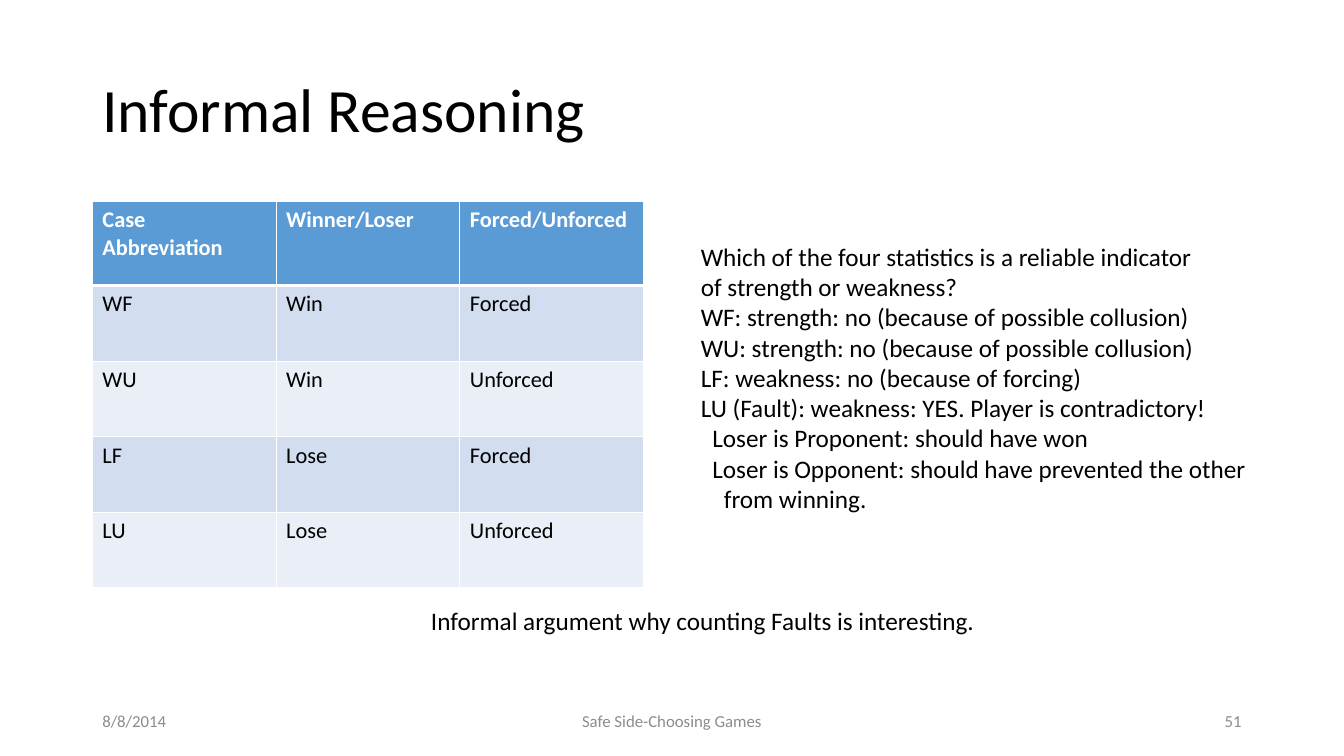
from dataclasses import dataclass

from lxml import etree
from pptx import Presentation
from pptx.dml.color import RGBColor
from pptx.enum.text import MSO_ANCHOR, PP_ALIGN
from pptx.oxml.ns import qn
from pptx.util import Pt

PX = 9525  # EMU per px, 96 px to the inch
LEFT, CENTER, RIGHT = PP_ALIGN.LEFT, PP_ALIGN.CENTER, PP_ALIGN.RIGHT
TOP, MIDDLE = MSO_ANCHOR.TOP, MSO_ANCHOR.MIDDLE


@dataclass(frozen=True)
class Theme:
    font: str = "Calibri"
    title_size: int = 44
    body_size: int = 18
    table_size: int = 16
    footer_size: int = 12
    ink: str = "000000"
    muted: str = "8C8C8C"
    white: str = "FFFFFF"
    header: str = "5B9BD5"
    bands: tuple = ("D2DEEF", "EAEFF7")


THEME = Theme()
CASES = [
    ("Case\nAbbreviation", "Winner/Loser", "Forced/Unforced"),
    ("WF", "Win", "Forced"),
    ("WU", "Win", "Unforced"),
    ("LF", "Lose", "Forced"),
    ("LU", "Lose", "Unforced"),
]
# Each line with its indent level
ARGUMENT = [
    ("Which of the four statistics is a reliable indicator", 0),
    ("of strength or weakness?", 0),
    ("WF: strength: no (because of possible collusion)", 0),
    ("WU: strength: no (because of possible collusion)", 0),
    ("LF: weakness: no (because of forcing)", 0),
    ("LU (Fault): weakness: YES. Player is contradictory!", 0),
    ("Loser is Proponent: should have won", 1),
    ("Loser is Opponent: should have prevented the other", 1),
    ("from winning.", 2),
]
INDENT = 11


def write_lines(frame, lines, size, color, bold=False, align=LEFT):
    """Fill a text frame with (text, indent level) lines; return its paragraphs."""
    for index, (text, level) in enumerate(lines):
        para = frame.paragraphs[0] if index == 0 else frame.add_paragraph()
        para.alignment = align
        if level:
            para._p.get_or_add_pPr().set("marL", str(level * INDENT * PX))
        span = para.add_run()
        span.text = text
        span.font.name = THEME.font
        span.font.size = Pt(size)
        span.font.bold = bold
        span.font.color.rgb = RGBColor.from_string(color)
    return frame.paragraphs


def add_text(page, box, lines, size, color=THEME.ink, align=LEFT, anchor=TOP):
    frame = page.shapes.add_textbox(*(length * PX for length in box)).text_frame
    frame.word_wrap = True
    frame.vertical_anchor = anchor
    return write_lines(frame, lines, size, color, align=align)


def add_title(page, box, text):
    paras = add_text(page, box, [(text, 0)], THEME.title_size, anchor=MIDDLE)
    paras[0].line_spacing = 0.9


def set_borders(cell, bottom_width):
    properties = cell._tc.get_or_add_tcPr()
    for side, width in (("L", 1), ("R", 1), ("T", 1), ("B", bottom_width)):
        line = etree.SubElement(properties, qn(f"a:ln{side}"), w=str(Pt(width)))
        fill = etree.SubElement(line, qn("a:solidFill"))
        etree.SubElement(fill, qn("a:srgbClr"), val=THEME.white)


def add_case_table(page, box, header_height):
    left, top, width, height = box
    row_count, column_count = len(CASES), len(CASES[0])
    table = page.shapes.add_table(
        row_count, column_count, left * PX, top * PX, width * PX, height * PX
    ).table
    table.horz_banding = False
    for column in table.columns:
        column.width = width * PX // column_count
    row_height = (height - header_height) // (row_count - 1)
    for row_index, values in enumerate(CASES):
        heading = row_index == 0
        table.rows[row_index].height = (header_height if heading else row_height) * PX
        band = THEME.header if heading else THEME.bands[(row_index - 1) % 2]
        # The line below the header is thick on both sides of the edge
        for column_index, value in enumerate(values):
            cell = table.cell(row_index, column_index)
            set_borders(cell, 3 if heading else 1)
            if row_index == 1:
                cell._tc.tcPr.find(qn("a:lnT")).set("w", str(Pt(3)))
            cell.fill.solid()
            cell.fill.fore_color.rgb = RGBColor.from_string(band)
            lines = [(line, 0) for line in value.split("\n")]
            color = THEME.white if heading else THEME.ink
            write_lines(cell.text_frame, lines, THEME.table_size, color, heading)


def add_footer(page, box, date, name, number):
    left, top, width, height = box
    side, middle = 288, 432
    parts = [
        (date, left, side, LEFT),
        (name, left + (width - middle) // 2, middle, CENTER),
        (number, left + width - side, side, RIGHT),
    ]
    for text, part_left, part_width, align in parts:
        add_text(page, (part_left, top, part_width, height), [(text, 0)],
                 THEME.footer_size, THEME.muted, align, MIDDLE)


def main():
    deck = Presentation()
    deck.slide_width, deck.slide_height = 1280 * PX, 720 * PX
    page = deck.slides.add_slide(deck.slide_layouts[6])

    # Heading and table of cases
    add_title(page, (88, 38, 1104, 139), "Informal Reasoning")
    add_case_table(page, (88, 192, 525, 368), header_height=80)

    # Argument and conclusion
    add_text(page, (658, 225, 546, 300), ARGUMENT, THEME.body_size)
    add_text(page, (401, 572, 544, 38),
             [("Informal argument why counting Faults is interesting.", 0)],
             THEME.body_size)

    # Footer
    add_footer(page, (88, 667, 1104, 38), "8/8/2014", "Safe Side-Choosing Games", "51")
    deck.save("out.pptx")


if __name__ == "__main__":
    main()
